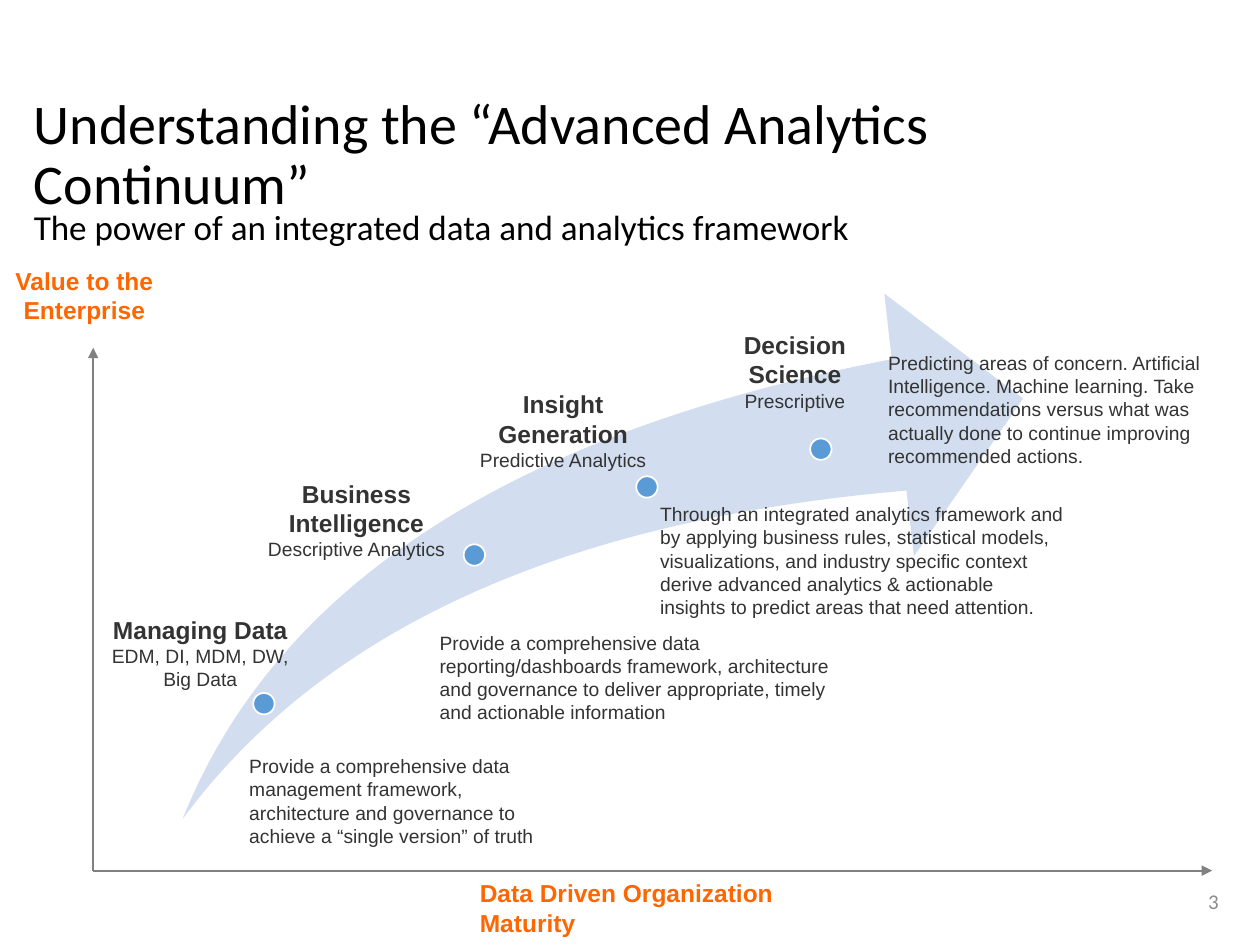
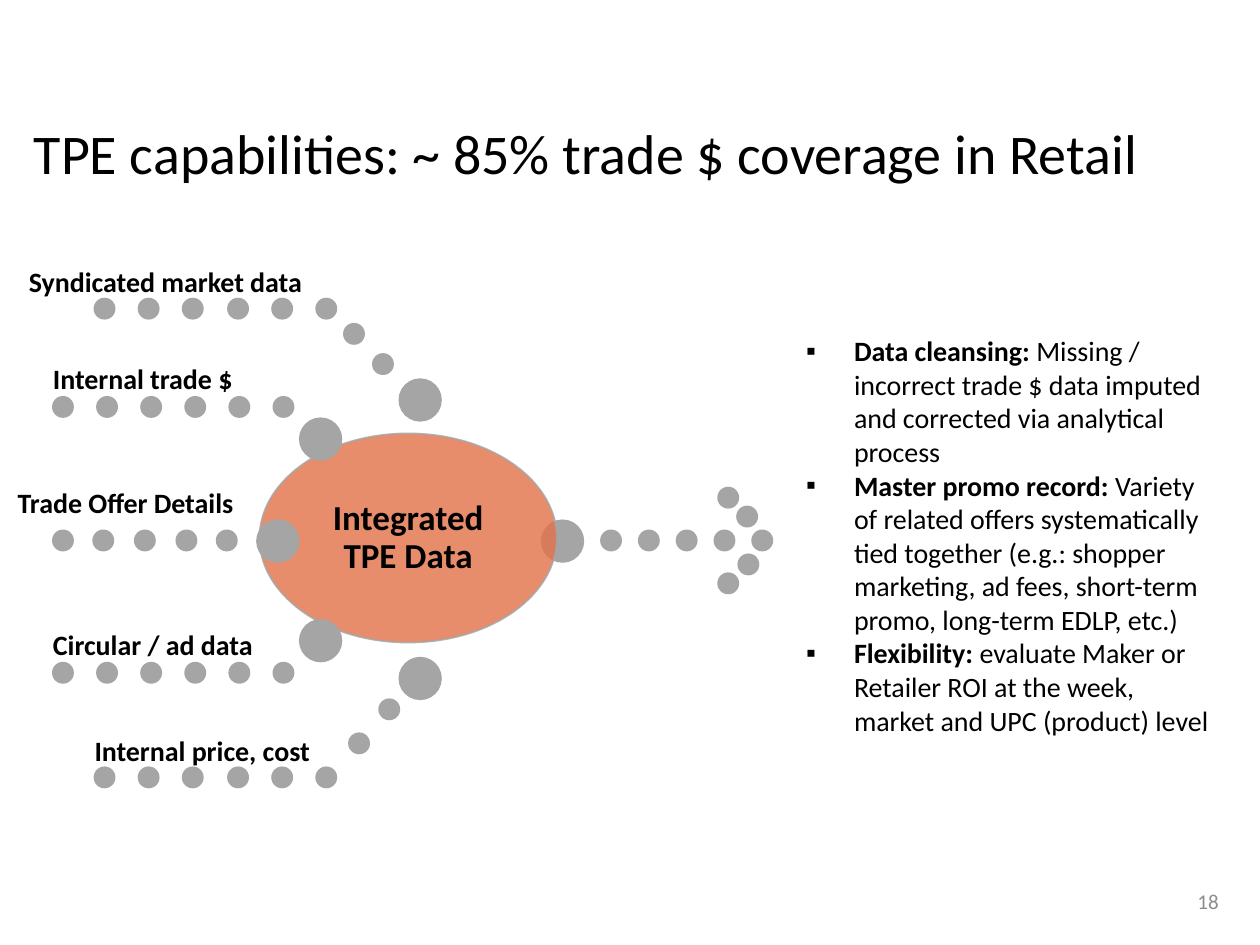
import pptx
import pptx.dml.color
import pptx.enum.shapes
import pptx.enum.text
import pptx.oxml
import pptx.oxml.ns
import pptx.util

SCALE = 9144  # EMU per px, 100 px to the inch
SHAPE = pptx.enum.shapes.MSO_SHAPE
ALIGN = pptx.enum.text.PP_ALIGN
ANCHOR = pptx.enum.text.MSO_ANCHOR
GROW = pptx.enum.text.MSO_AUTO_SIZE.SHAPE_TO_FIT_TEXT

BLACK, INK, ORANGE = "000000", "333333", "FF6600"
AXIS_GREY, NUMBER_GREY, DOT_GREY = "808080", "8C8C8C", "A5A5A5"
SWOOSH_BLUE, MARKER_BLUE, HUB_ORANGE, WHITE = "D2DEEF", "5B9BD5", "E2744C", "FFFFFF"

TITLE = {"name": "Calibri", "size": 32, "color": BLACK}
SUBTITLE = {**TITLE, "size": 20}
BULLET = {**TITLE, "size": 16}
BULLET_LEAD = {**BULLET, "bold": True}
HUB = {**SUBTITLE, "bold": True}
NUMBER = {"name": "Calibri", "size": 12, "color": NUMBER_GREY}
DETAIL = {"name": "Arial", "size": 11, "color": INK}
STAGE = {**DETAIL, "size": 14, "bold": True}
AXIS = {**STAGE, "color": ORANGE}


def px(length):
    return pptx.util.Emu(round(length * SCALE))


def rgb(code):
    return pptx.dml.color.RGBColor.from_string(code)


def assign(target, values):
    for name, value in values.items():
        setattr(target, name, value)


def xml(tag, **attributes):
    """Make one drawing element such as a:tailEnd."""
    element = pptx.oxml.parse_xml(f"<a:{tag} {pptx.oxml.ns.nsdecls('a')}/>")
    for name, value in attributes.items():
        element.set(name, str(value))
    return element


class Deck:
    def __init__(self):
        self.file = pptx.Presentation()
        assign(self.file, {"slide_width": px(1000), "slide_height": px(750)})
        self.slide = None

    def new_slide(self, title, number):
        self.slide = self.file.slides.add_slide(self.file.slide_layouts[6])
        self.text((17, 86, 960, 76), [[(title, TITLE)]], anchor=ANCHOR.MIDDLE, spacing=0.9)
        self.text((752, 695, 225, 40), [[(number, NUMBER)]], anchor=ANCHOR.MIDDLE,
                  align=ALIGN.RIGHT)

    def fill_frame(self, frame, paragraphs, anchor=ANCHOR.TOP, align=ALIGN.LEFT,
                   spacing=None, insets=(10, 5), bullet=None):
        """Fill a text frame; each paragraph is a list of (words, style) runs."""
        across, down = map(px, insets)
        assign(frame, {"word_wrap": True, "vertical_anchor": anchor,
                       "margin_left": across, "margin_right": across,
                       "margin_top": down, "margin_bottom": down})
        for index, runs in enumerate(paragraphs):
            paragraph = frame.add_paragraph() if index else frame.paragraphs[0]
            if bullet:
                properties = paragraph._p.get_or_add_pPr()
                properties.set("marL", str(px(38)))
                properties.set("indent", str(px(-38)))
                properties.append(xml("buFont", typeface="Arial"))
                properties.append(xml("buChar", char=bullet))
            assign(paragraph, {"alignment": align, "line_spacing": spacing})
            for words, style in runs:
                run = paragraph.add_run()
                run.text = words
                assign(run.font, {"name": style["name"], "bold": style.get("bold", False),
                                  "size": pptx.util.Pt(style["size"])})
                run.font.color.rgb = rgb(style["color"])

    def text(self, box, paragraphs, grow=False, **layout):
        frame = self.slide.shapes.add_textbox(*map(px, box)).text_frame
        self.fill_frame(frame, paragraphs, **layout)
        if grow:
            frame.auto_size = GROW

    def shape(self, kind, box, fill, line=None, opacity=None):
        shape = self.slide.shapes.add_shape(kind, *map(px, box))
        shape.shadow.inherit = False
        shape.fill.solid()
        shape.fill.fore_color.rgb = rgb(fill)
        if line:
            shape.line.color.rgb = rgb(line)
            shape.line.width = pptx.util.Pt(1)
        else:
            shape.line.fill.background()
        if opacity:
            for color in shape.element.spPr.iter(pptx.oxml.ns.qn("a:srgbClr")):
                color.append(xml("alpha", val=opacity * 1000))
        return shape

    def dot(self, left, top, size=16, fill=DOT_GREY, line=DOT_GREY):
        self.shape(SHAPE.OVAL, (left, top, size, size), fill, line)

    def dot_row(self, first, last, top, count):
        """Spread dots evenly from the first left edge to the last."""
        for index in range(count):
            self.dot(first + round((last - first) * index / (count - 1)), top)

    def arrow(self, start, end):
        arrow = self.slide.shapes.add_connector(
            pptx.enum.shapes.MSO_CONNECTOR.STRAIGHT, *map(px, start + end))
        arrow.line.color.rgb = rgb(AXIS_GREY)
        arrow.line.width = pptx.util.Pt(1)
        properties = arrow.element.spPr
        properties.find(pptx.oxml.ns.qn("a:ln")).append(xml("tailEnd", type="triangle"))
        properties.append(xml("effectLst"))


def build_continuum(deck):
    deck.new_slide("Understanding the “Advanced Analytics Continuum”", "3")
    deck.text((17, 162, 960, 42),
              [[("The power of an integrated data and analytics framework", SUBTITLE)]],
              spacing=0.9)
    origin = (74, 691)
    for tip in ((74, 276), (962, 691)):
        deck.arrow(origin, tip)
    deck.text((0, 206, 134, 57), [[("Value to the Enterprise", AXIS)]],
              grow=True, align=ALIGN.CENTER)
    deck.text((371, 692, 333, 26), [[("Data Driven Organization Maturity", AXIS)]], grow=True)

    swoosh = deck.shape(SHAPE.SWOOSH_ARROW, (145, 233, 667, 417), SWOOSH_BLUE)
    swoosh.adjustments[0] = swoosh.adjustments[1] = 0.25
    for left, top in ((201, 550), (368, 432), (505, 378), (643, 348)):
        deck.dot(left, top, 17, MARKER_BLUE, WHITE)

    stages = [
        ("Managing Data", "EDM, DI, MDM, DW, Big Data", (74, 483, 170, 71),
         "Provide a comprehensive data management framework, architecture and "
         "governance to achieve a “single version” of truth", (188, 594, 253, 84)),
        ("Business Intelligence", "Descriptive Analytics", (198, 375, 170, 76),
         "Provide a comprehensive data reporting/dashboards framework, architecture "
         "and governance to deliver appropriate, timely and actionable information",
         (339, 496, 341, 84)),
        ("Insight Generation", "Predictive Analytics", (362, 304, 170, 76),
         "Through an integrated analytics framework and by applying business rules, "
         "statistical models, visualizations, and industry specific context derive "
         "advanced analytics & actionable insights to predict areas that need attention.",
         (514, 394, 341, 103)),
        ("Decision Science", "Prescriptive", (546, 257, 170, 76),
         "Predicting areas of concern. Artificial Intelligence. Machine learning. Take "
         "recommendations versus what was actually done to continue improving "
         "recommended actions.", (695, 274, 303, 103)),
    ]
    for stage, method, stage_box, detail, detail_box in stages:
        deck.text(stage_box, [[(stage, STAGE)], [(method, DETAIL)]],
                  grow=True, align=ALIGN.CENTER)
        deck.text(detail_box, [[(detail, DETAIL)]], grow=True)


def build_capabilities(deck):
    deck.new_slide("TPE capabilities: ~ 85% trade $ coverage in Retail", "18")

    deck.dot_row(477, 597, 421, 5)
    deck.dot(430, 413, 33)
    for left, top in ((570, 387), (570, 455), (585, 402), (586, 440)):
        deck.dot(left, top)

    hub = deck.shape(SHAPE.OVAL, (206, 344, 236, 166), HUB_ORANGE, DOT_GREY, opacity=82)
    deck.fill_frame(hub.text_frame, [[("Integrated TPE Data", HUB)]], anchor=ANCHOR.MIDDLE,
                    align=ALIGN.CENTER, spacing=0.9, insets=(11, 8))

    # label, its box, (first, last, top, count) of the row, bends, large end dot
    sources = [
        ("Syndicated market data", (23, 195, 296, 42), (75, 251, 237, 6),
         [(273, 257), (296, 281)], (317, 301)),
        ("Internal trade $", (42, 272, 192, 42), (42, 217, 315, 6), [], (238, 332)),
        ("Trade Offer Details", (14, 370, 202, 42), (42, 172, 421, 5), [], (204, 413)),
        ("Circular / ad data", (42, 483, 192, 42), (42, 217, 526, 6), [], (238, 492)),
        ("Internal price, cost", (75, 567, 192, 42), (75, 251, 609, 6),
         [(277, 582), (301, 555)], (317, 522)),
    ]
    for label, label_box, row, bends, end in sources:
        deck.dot(*end, 33)
        for bend in bends:
            deck.dot(*bend)
        deck.dot_row(*row)
        deck.text(label_box, [[(label, BULLET_LEAD)]], anchor=ANCHOR.BOTTOM,
                  spacing=0.9, insets=(0, 0))

    benefits = [
        ("Data cleansing: ", "Missing / incorrect trade $ data imputed and corrected "
         "via analytical process"),
        ("Master promo record: ", "Variety of related offers systematically tied together "
         "(e.g.: shopper marketing, ad fees, short-term promo, long-term EDLP, etc.)"),
        ("Flexibility: ", "evaluate Maker or Retailer ROI at the week, market and UPC "
         "(product) level"),
    ]
    deck.text((630, 260, 347, 333),
              [[(lead, BULLET_LEAD), (rest, BULLET)] for lead, rest in benefits],
              grow=True, bullet="▪")


def main():
    deck = Deck()
    build_continuum(deck)
    build_capabilities(deck)
    deck.file.save("out.pptx")


if __name__ == "__main__":
    main()
